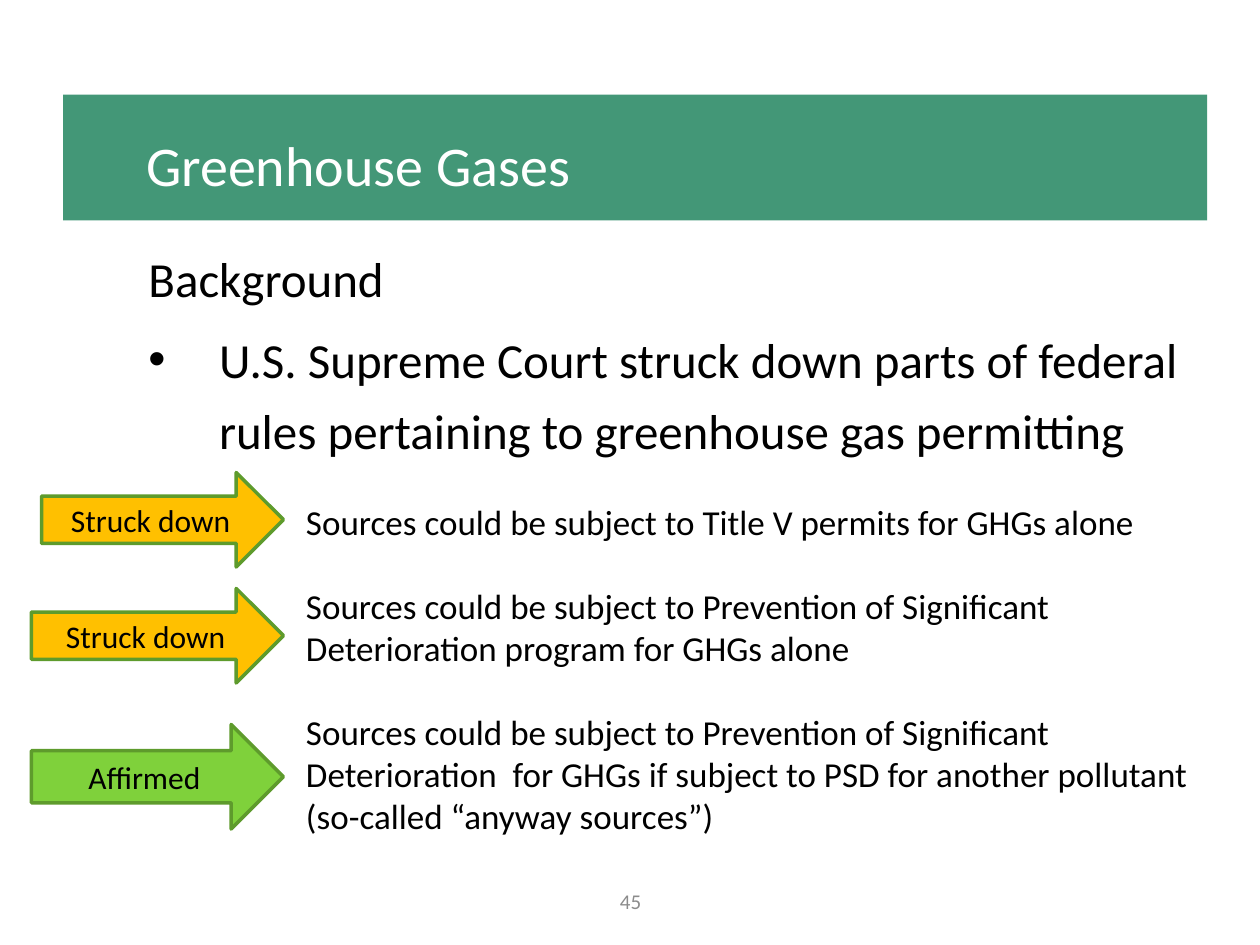
"""Build the greenhouse gases slide with its court rulings."""
from collections import namedtuple
from lxml import etree
from pptx import Presentation, util as u
from pptx.dml.color import RGBColor as Rgb
from pptx.enum import shapes, text
from pptx.oxml.ns import qn

Theme = namedtuple("Theme", "font teal gold green edge ink white gray title body rule tag page")
look = Theme("Calibri", "439777", "FFC000", "7FD13B", "5E9B2C", "000000",
             "FFFFFF", "8C8C8C", 32, 28, 20, 18, 12)


def place(shape, *box):
    shape.left, shape.top, shape.width, shape.height = map(u.Inches, box)


def write(frame, lines, size, color, align=text.PP_ALIGN.LEFT, space=None, after=0):
    frame.word_wrap = True
    for i, line in enumerate(lines):
        para = frame.add_paragraph() if i else frame.paragraphs[0]
        para.alignment = align
        para.line_spacing = space
        para.space_before, para.space_after = u.Pt(0), u.Pt(after)
        run = para.add_run()
        run.text = line
        run.font.name, run.font.size = look.font, u.Pt(size)
        run.font.color.rgb = Rgb.from_string(color)


deck = Presentation()
deck.slide_width, deck.slide_height = u.Inches(10), u.Inches(7.5)
slide = deck.slides.add_slide(deck.slide_layouts[5])
items = slide.shapes

title = items.title
place(title, 0.5, 0.75, 9.08, 1)
title.fill.solid()
title.fill.fore_color.rgb = Rgb.from_string(look.teal)
title.text_frame.margin_left = u.Inches(0.66)
title.text_frame.vertical_anchor = text.MSO_ANCHOR.MIDDLE
write(title.text_frame, ["Greenhouse Gases"], look.title, look.white, space=1.2, after=6)

body = items.add_textbox(0, 0, 0, 0)
place(body, 0.58, 1.83, 9.08, 2)
write(body.text_frame, [
    "Background",
    "U.S. Supreme Court struck down parts of federal rules pertaining to greenhouse gas permitting",
], look.body, look.ink, space=1.2, after=6)
for para, mark in zip(body.text_frame.paragraphs, ("", "•")):
    props = para._p.get_or_add_pPr()
    props.set("marL", str(u.Inches(1.06)))
    props.set("indent", str(u.Inches(-0.56)))
    if mark:
        etree.SubElement(props, qn("a:buFont"), typeface="Arial")
        etree.SubElement(props, qn("a:buChar"), char=mark)

rules = items.add_textbox(0, 0, 0, 0)
place(rules, 2.33, 3.92, 7.42, 2.79)
write(rules.text_frame, [
    "Sources could be subject to Title V permits for GHGs alone",
    "Sources could be subject to Prevention of Significant Deterioration program for GHGs alone",
    "Sources could be subject to Prevention of Significant Deterioration  for GHGs "
    "if subject to PSD for another pollutant (so-called “anyway sources”)",
], look.rule, look.ink, after=24)

tip = 2.25
for label, fill, left, top, high in (
    ("Struck down", look.gold, 0.33, 3.75, 0.75),
    ("Struck down", look.gold, 0.25, 4.67, 0.75),
    ("Affirmed", look.green, 0.25, 5.75, 0.83),
):
    arrow = items.add_shape(shapes.MSO_SHAPE.RIGHT_ARROW, 0, 0, 0, 0)
    place(arrow, left, top, tip - left, high)
    arrow.shadow.inherit = False
    arrow.fill.solid()
    arrow.fill.fore_color.rgb = Rgb.from_string(fill)
    arrow.line.color.rgb = Rgb.from_string(look.edge)
    arrow.line.width = u.Pt(2)
    arrow.text_frame.vertical_anchor = text.MSO_ANCHOR.MIDDLE
    write(arrow.text_frame, [label], look.tag, look.ink, text.PP_ALIGN.CENTER)

page = items.add_textbox(0, 0, 0, 0)
place(page, 3.42, 6.95, 3.17, 0.4)
page.text_frame.vertical_anchor = text.MSO_ANCHOR.MIDDLE
write(page.text_frame, ["45"], look.page, look.gray, text.PP_ALIGN.CENTER)

deck.save("out.pptx")
